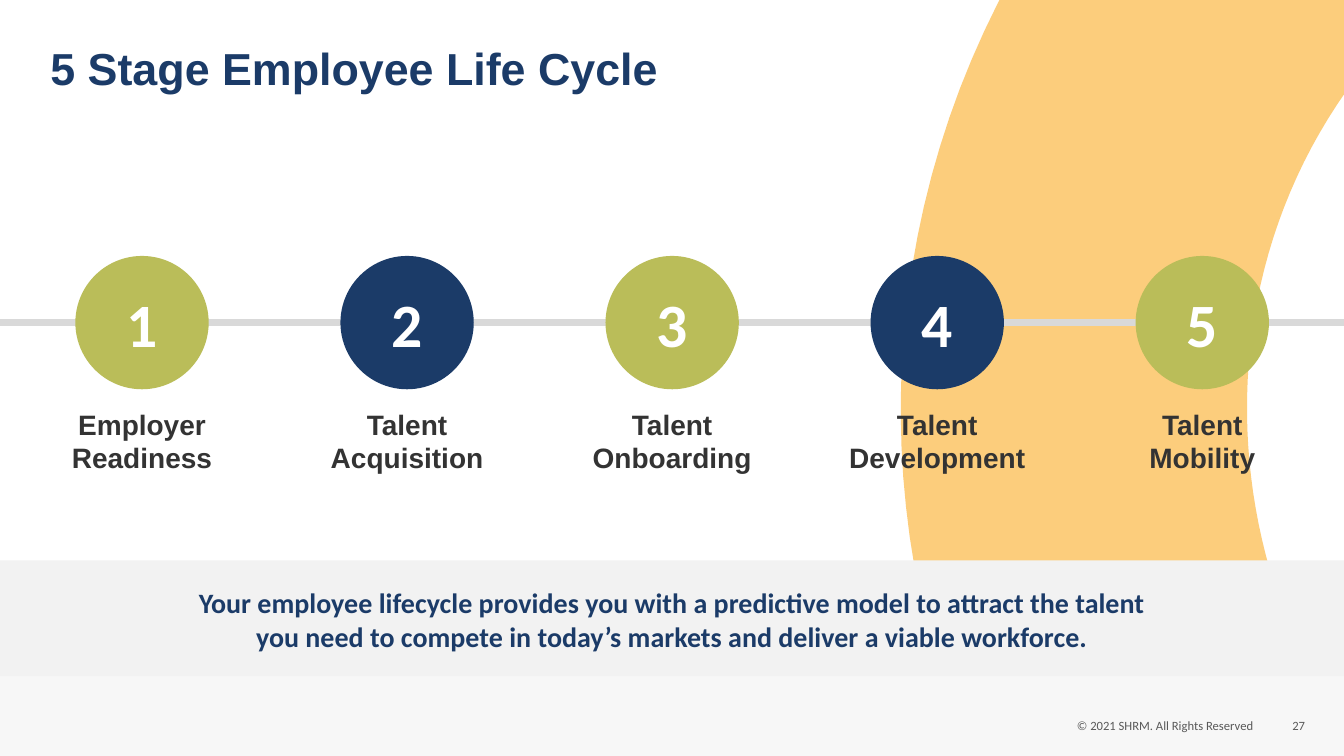
from lxml.etree import SubElement
from pptx import Presentation
from pptx.dml.color import RGBColor
from pptx.enum.shapes import MSO_CONNECTOR as Line, MSO_SHAPE as Shape
from pptx.enum.text import MSO_ANCHOR as Anchor, PP_ALIGN as Align
from pptx.oxml.ns import qn
from pptx.util import Cm, Pt

NAVY = RGBColor(0x1B, 0x3B, 0x68)
GREEN = RGBColor(0xBA, 0xBD, 0x59)
AMBER = RGBColor(0xFC, 0xC5, 0x66)
WHITE = RGBColor(0xFF, 0xFF, 0xFF)
PALE = RGBColor(0xF7, 0xF7, 0xF7)
LIGHT = RGBColor(0xF2, 0xF2, 0xF2)
GREY = RGBColor(0xD9, 0xD9, 0xD9)
SLATE = RGBColor(0x59, 0x59, 0x59)
DARK = RGBColor(0x33, 0x33, 0x33)
WIDE, HIGH = 33.87, 19.05

deck = Presentation()
deck.slide_width, deck.slide_height = Cm(WIDE), Cm(HIGH)
slide = deck.slides.add_slide(deck.slide_layouts[6])
shapes = slide.shapes


def write(shape, lines, size, font, color, bold=True, align=Align.CENTER,
          anchor=Anchor.TOP, inset=True):
    """Fill a shape with one paragraph, its lines parted by breaks."""
    frame = shape.text_frame
    frame.word_wrap = True
    frame.vertical_anchor = anchor
    if not inset:
        frame.margin_left = frame.margin_right = Cm(0)
        frame.margin_top = frame.margin_bottom = Cm(0)
    para = frame.paragraphs[0]
    para.alignment = align
    for i, line in enumerate(lines):
        if i:
            para.add_line_break()
        run = para.add_run()
        run.text = line
        run.font.size, run.font.name = Pt(size), font
        run.font.bold, run.font.color.rgb = bold, color
    return para


def curve(a, b, c, d, steps=40):
    """Return points along a cubic Bezier curve, without its start."""
    spots = []
    for n in range(1, steps + 1):
        t = n / steps
        u = 1 - t
        spots.append(tuple(
            u**3 * p + 3 * u * u * t * q + 3 * u * t * t * r + t**3 * s
            for p, q, r, s in zip(a, b, c, d)))
    return spots


# Amber arc
top, low = (27.28, -3.33), (28.3, 25.27)
inner, bend, tip = (33.22, 17.35), (34.21, 1.91), (35.97, 0)
edge = [(36.53, -0.46), (27.91, -4.09), top]
edge += curve(top, (20.7, 5.38), (21.36, 17.35), low)
edge += [(29.59, 26.62), (33.4, 17.6), inner]
edge += curve(inner, (30.66, 12.62), (30.71, 6.53), bend)
edge += curve(bend, (34.75, 1.22), (35.33, 0.58), tip)
spots = [(Cm(x), Cm(y)) for x, y in edge]
path = shapes.build_freeform(*spots[0])
path.add_line_segments(spots[1:], close=True)
arc = path.convert_to_shape()
arc.shadow.inherit = False
arc.fill.solid()
arc.fill.fore_color.rgb = AMBER
arc.line.fill.background()
tint = arc.fill._xPr.find(qn("a:solidFill"))[0]
SubElement(tint, qn("a:alpha")).set("val", "85000")

# Footer and message bands
for y, tall, color in [(16.48, HIGH - 16.48, PALE), (14.12, 2.92, LIGHT)]:
    band = shapes.add_shape(Shape.RECTANGLE, Cm(0), Cm(y), Cm(WIDE), Cm(tall))
    band.shadow.inherit = False
    band.fill.solid()
    band.fill.fore_color.rgb = color
    band.line.fill.background()

# Footer rule and timeline
for y, width, color in [(16.48, 0.5, LIGHT), (8.13, 5, GREY)]:
    rule = shapes.add_connector(Line.STRAIGHT, Cm(0), Cm(y), Cm(WIDE), Cm(y))
    rule.line.width = Pt(width)
    rule.line.color.rgb = color
    SubElement(rule._element.spPr, qn("a:effectLst"))

# Title, message and footer text
title = shapes.add_textbox(Cm(1.02), Cm(0.69), Cm(16.43), Cm(2.21))
para = write(title, ["5 Stage Employee Life Cycle"], 32, "Arial", NAVY,
             align=Align.LEFT, anchor=Anchor.MIDDLE)
para.line_spacing = 0.9

message = shapes.add_textbox(Cm(0.84), Cm(14.63), Cm(32.18), Cm(1.96))
write(message, [
    "Your employee lifecycle provides you with a predictive model to attract the talent",
    "you need to compete in today’s markets and deliver a viable workforce.",
], 20, "Calibri", NAVY)

for text, x, y, wide, tall, align in [
    ("© 2021 SHRM. All Rights Reserved", 26.92, 17.7, 4.88, 1.17, Align.CENTER),
    ("27", 31.8, 17.5, 1.09, 1.57, Align.RIGHT),
]:
    note = shapes.add_textbox(Cm(x), Cm(y), Cm(wide), Cm(tall))
    write(note, [text], 9, "Calibri", SLATE, False, align, Anchor.MIDDLE, False)

# Five stages
SIZE, FIRST, STEP = 3.36, 3.58, 6.68
stages = [
    ("Employer Readiness", 5.49),
    ("Talent Acquisition", 5.49),
    ("Talent Onboarding", 5.49),
    ("Talent Development", 5.49),
    ("Talent Mobility", 4.27),
]
for i, (name, wide) in enumerate(stages):
    mid = FIRST + i * STEP
    disc = shapes.add_shape(Shape.OVAL, Cm(mid - SIZE / 2), Cm(6.45),
                            Cm(SIZE), Cm(SIZE))
    disc.shadow.inherit = False
    disc.fill.solid()
    disc.fill.fore_color.rgb = NAVY if i % 2 else GREEN
    disc.line.fill.background()
    write(disc, [str(i + 1)], 44, "Calibri", WHITE,
          anchor=Anchor.MIDDLE, inset=False)
    label = shapes.add_textbox(Cm(mid - wide / 2), Cm(10.26), Cm(wide), Cm(1.5))
    write(label, [name], 20, "Arial", DARK, inset=False)

deck.save("out.pptx")
